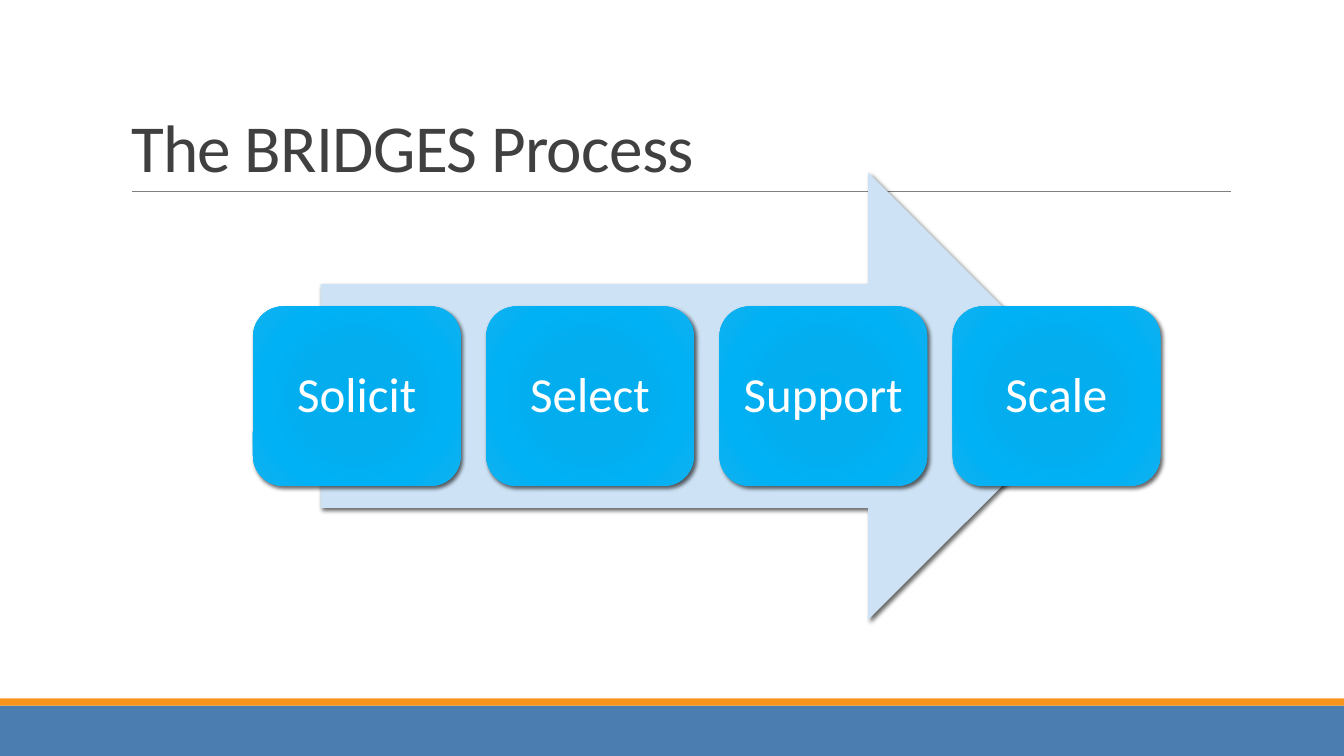
from lxml.etree import SubElement
from pptx import Presentation
from pptx.dml.color import RGBColor
from pptx.enum.shapes import MSO_CONNECTOR, MSO_SHAPE
from pptx.enum.text import MSO_ANCHOR, PP_ALIGN
from pptx.oxml import parse_xml
from pptx.oxml.ns import nsdecls, qn
from pptx.util import Inches, Pt


def color(hex_code):
    return RGBColor.from_string(hex_code)


def add_block(preset, left, top, width, height, fill, shadowed):
    block = slide.shapes.add_shape(
        preset, Inches(left), Inches(top), Inches(width), Inches(height))
    block.fill.solid()
    block.fill.fore_color.rgb = color(fill)
    block.line.fill.background()
    block.shadow.inherit = False
    if shadowed:
        effects = block.element.spPr.find(qn("a:effectLst"))
        effects.append(parse_xml(
            f'<a:outerShdw {nsdecls("a")} blurRad="{Pt(3)}" dist="{Pt(2)}" '
            'dir="2700000" rotWithShape="0"><a:srgbClr val="000000">'
            '<a:alpha val="60000"/></a:srgbClr></a:outerShdw>'))
    return block


prs = Presentation()
prs.slide_width, prs.slide_height = Inches(13.33), Inches(7.5)
slide = prs.slides.add_slide(prs.slide_layouts[5])

add_block(MSO_SHAPE.RECTANGLE, 0, 7, 13.33, 0.5, "4B7DB0", False)
add_block(MSO_SHAPE.RECTANGLE, 0, 6.93, 13.33, 0.07, "F7941D", False)

title_rule = slide.shapes.add_connector(
    MSO_CONNECTOR.STRAIGHT, Inches(1.31), Inches(1.9), Inches(12.21), Inches(1.9))
title_rule.line.color.rgb = color("808080")
title_rule.line.width = Pt(0.5)
SubElement(title_rule.element.spPr, qn("a:effectLst"))

title = slide.shapes.title
title.left, title.top = Inches(1.2), Inches(0.31)
title.width, title.height = Inches(11), Inches(1.59)
title.text_frame.vertical_anchor = MSO_ANCHOR.BOTTOM
heading = title.text_frame.paragraphs[0]
heading.alignment = PP_ALIGN.LEFT
heading.line_spacing = 0.85
heading_run = heading.add_run()
heading_run.text = "The BRIDGES Process"
heading_run.font.name = "Calibri"
heading_run.font.size = Pt(48)
heading_run.font.color.rgb = color("404040")
heading_run.font._element.set("spc", "-50")

add_block(MSO_SHAPE.RIGHT_ARROW, 3.18, 1.71, 7.65, 4.44, "CDE3F5", True)

glow_stops = [(0, "00ADEF"), (34, "03ADEE"), (70, "00B1F5"), (100, "12B1EE")]
glow_xml = "".join(
    f'<a:gs pos="{percent * 1000}"><a:srgbClr val="{shade}"/></a:gs>'
    for percent, shade in glow_stops)

for index, stage in enumerate(["Solicit", "Select", "Support", "Scale"]):
    card = add_block(MSO_SHAPE.ROUNDED_RECTANGLE,
                     2.51 + index * 2.313, 3.04, 2.06, 1.78, "00ADEF", True)
    properties = card.element.spPr
    properties.replace(properties.find(qn("a:solidFill")), parse_xml(
        f'<a:gradFill {nsdecls("a")} rotWithShape="1"><a:gsLst>{glow_xml}</a:gsLst>'
        '<a:path path="circle"><a:fillToRect l="100000" t="100000" '
        'r="100000" b="100000"/></a:path></a:gradFill>'))
    frame = card.text_frame
    frame.word_wrap = True
    frame.vertical_anchor = MSO_ANCHOR.MIDDLE
    frame.margin_left = frame.margin_right = Inches(0.15)
    frame.margin_top = frame.margin_bottom = Inches(0.15)
    label = frame.paragraphs[0]
    label.alignment = PP_ALIGN.CENTER
    label.line_spacing = 0.9
    label_run = label.add_run()
    label_run.text = stage
    label_run.font.name = "Calibri"
    label_run.font.size = Pt(35)
    label_run.font.color.rgb = color("FFFFFF")

prs.save("out.pptx")
